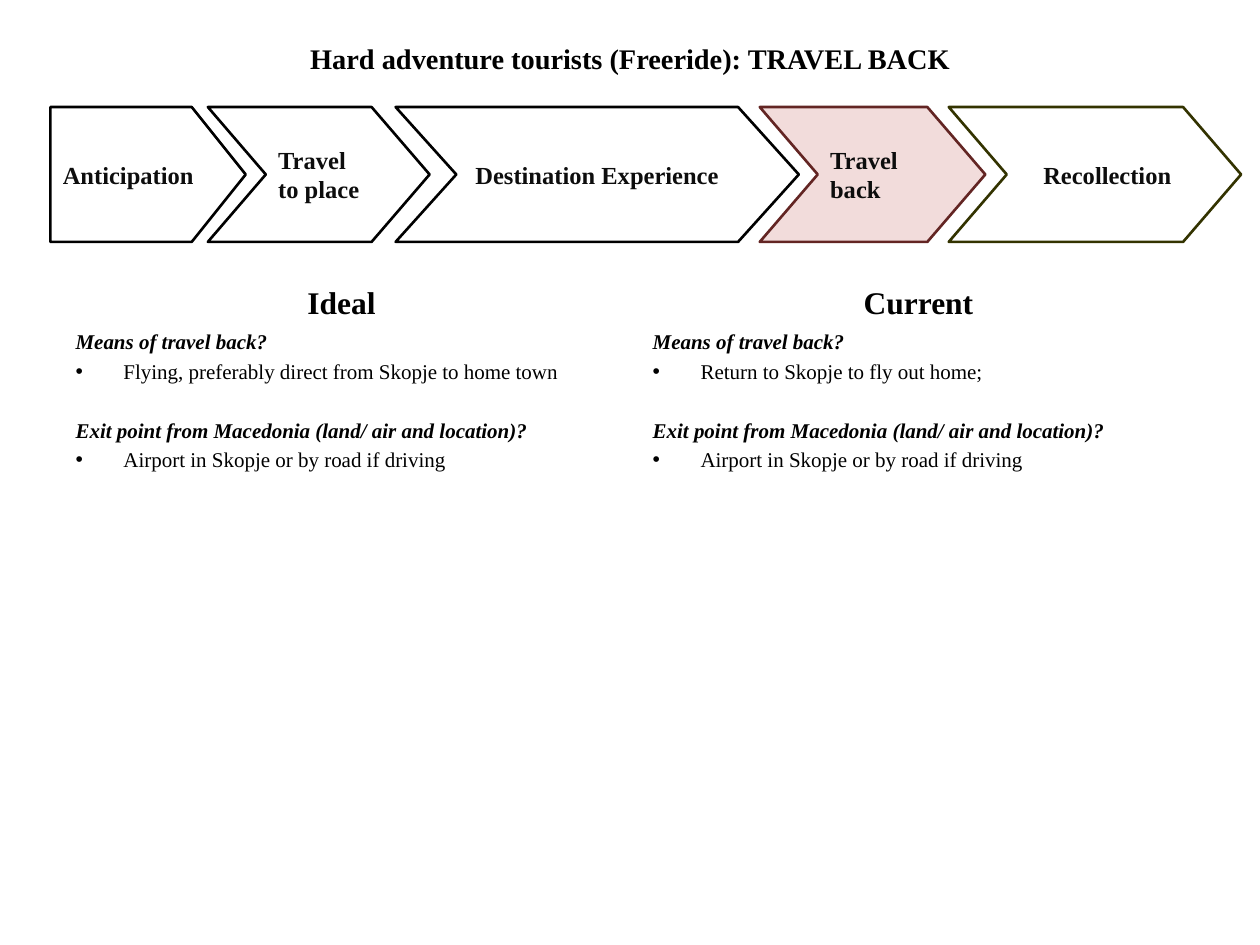
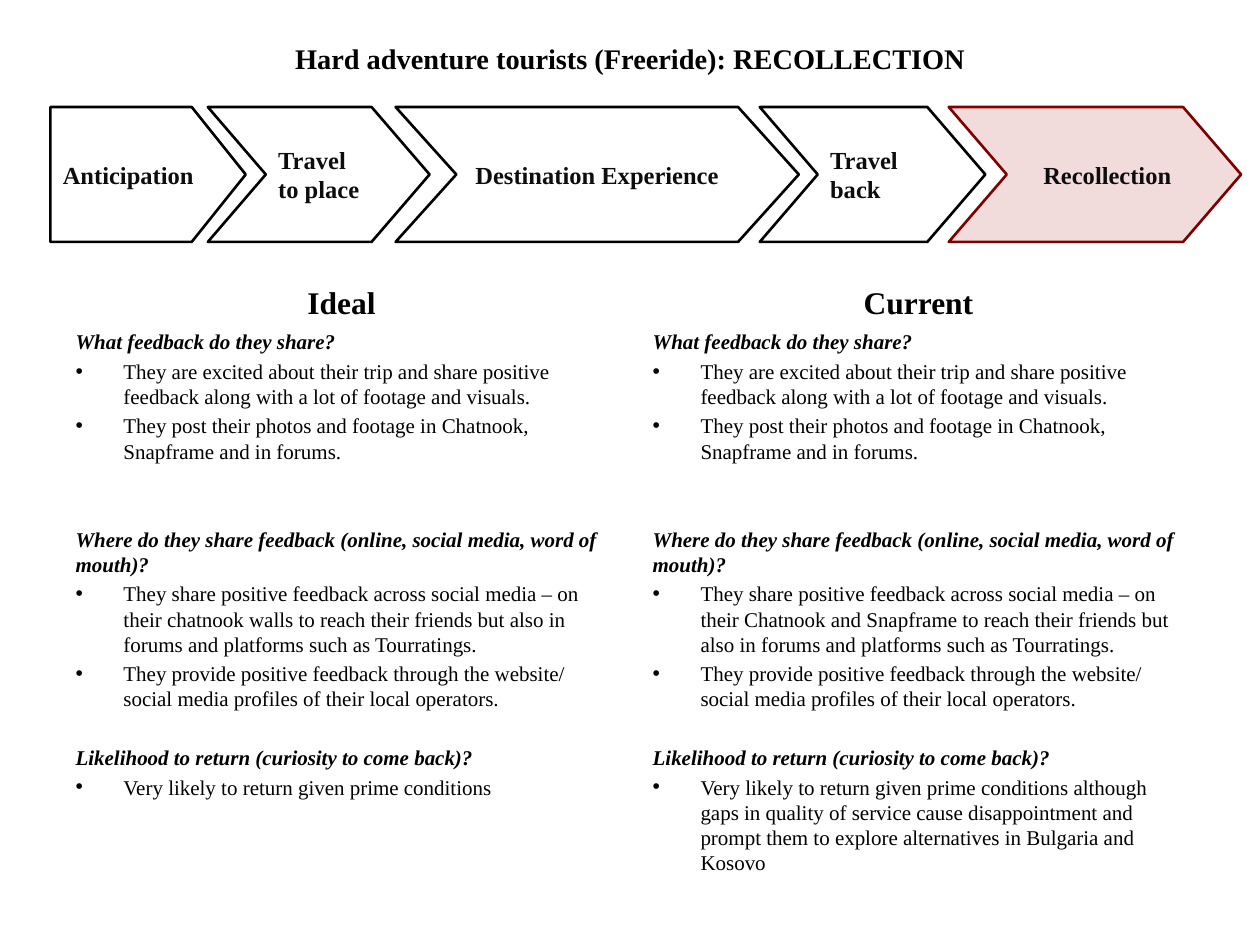
from lxml import etree
from pptx import Presentation
from pptx.dml.color import RGBColor
from pptx.enum.shapes import MSO_SHAPE
from pptx.enum.text import MSO_ANCHOR, MSO_AUTO_SIZE, PP_ALIGN
from pptx.oxml.ns import qn
from pptx.util import Inches, Pt

PENTAGON, CHEVRON = MSO_SHAPE.PENTAGON, MSO_SHAPE.CHEVRON
LEFT, CENTER = PP_ALIGN.LEFT, PP_ALIGN.CENTER
TOP, MIDDLE, BOTTOM = MSO_ANCHOR.TOP, MSO_ANCHOR.MIDDLE, MSO_ANCHOR.BOTTOM
NO_FIT = MSO_AUTO_SIZE.NONE

# Shared style
FONT = "Times New Roman"
BLACK, INK, PINK, WHITE = "000000", "0D0D0D", "F2DCDB", "FFFFFF"
BODY_SIZE = 12
SPACE = 2.4          # space before every paragraph, points
BLANK_LINE = 16.8    # height of one skipped line, points
INDENT = 0.38

TITLE_BOX = (0.5, 0.3, 9, 0.33)
BAND_TOP, BAND_HEIGHT = 0.85, 1.07
COLUMN_LEFTS, COLUMN_TOP = (0.5, 5.08), 2.1
COLUMN_WIDTH = 4.42

# Journey stages: text, shape, left, width, adjustment, alignment, left inset
STAGES = [
    ("Anticipation", PENTAGON, 0.4, 1.55, 0.4, LEFT, 0.1),
    ("Travel to place", CHEVRON, 1.65, 1.76, 0.43, LEFT, 0.1),
    ("Destination Experience", CHEVRON, 3.14, 3.2, 0.45, CENTER, 0.1),
    ("Travel back", CHEVRON, 6.03, 1.79, 0.43, LEFT, 0.1),
    ("Recollection", CHEVRON, 7.53, 2.32, 0.43, LEFT, 0.29),
]

# Questions: heading, lines skipped above it, answers
MEANS = "Means of travel back?"
EXIT = ("Exit point from Macedonia (land/ air and location)?", 1,
        ["Airport in Skopje or by road if driving"])
FEEDBACK = ("What feedback do they share?", 0, [
    "They are excited about their trip and share positive feedback along "
    "with a lot of footage and visuals.",
    "They post their photos and footage in Chatnook, Snapframe and in forums."])
WHERE = "Where do they share feedback (online, social media, word of mouth)?"
OPERATORS = ("They provide positive feedback through the website/ social media "
             "profiles of their local operators.")
RETURN = "Likelihood to return (curiosity to come back)?"

SLIDES = [
    {
        "title": "TRAVEL BACK",
        "accents": {"Travel back": (PINK, "632523"),
                    "Recollection": (WHITE, "333300")},
        "Ideal": [
            (MEANS, 0, ["Flying, preferably direct from Skopje to home town"]),
            EXIT],
        "Current": [
            (MEANS, 0, ["Return to Skopje to fly out home;"]),
            EXIT],
    },
    {
        "title": "RECOLLECTION",
        "accents": {"Recollection": (PINK, "800000")},
        "Ideal": [
            FEEDBACK,
            (WHERE, 2, [
                "They share positive feedback across social media – on their "
                "chatnook walls to reach their friends but also in forums and "
                "platforms such as Tourratings.", OPERATORS]),
            (RETURN, 1, ["Very likely to return given prime conditions"])],
        "Current": [
            FEEDBACK,
            (WHERE, 2, [
                "They share positive feedback across social media – on their "
                "Chatnook and Snapframe to reach their friends but also in "
                "forums and platforms such as Tourratings.", OPERATORS]),
            (RETURN, 1, [
                "Very likely to return given prime conditions although gaps in "
                "quality of service cause disappointment and prompt them to "
                "explore alternatives in Bulgaria and Kosovo"])],
    },
]


def rgb(value):
    return RGBColor.from_string(value)


def place(sp, left, top, width, height, anchor):
    sp.left, sp.top = Inches(left), Inches(top)
    sp.width, sp.height = Inches(width), Inches(height)
    tf = sp.text_frame
    tf.word_wrap = True
    tf.auto_size = NO_FIT
    tf.vertical_anchor = anchor
    return tf


def write(p, text, size, color=BLACK, bold=True, italic=False, align=LEFT, space=0):
    p.text = text
    p.alignment = align
    p.space_before = Pt(space)
    font = p.runs[0].font
    font.name, font.size = FONT, Pt(size)
    font.bold, font.italic = bold, italic
    font.color.rgb = rgb(color)


def set_bullet(p, char=None):
    """Hanging bullet, or a plain flush paragraph when no char is given."""
    pPr = p._p.get_or_add_pPr()
    indent = Inches(INDENT) if char else 0
    pPr.set("marL", str(indent))
    pPr.set("indent", str(-indent))
    if char:
        etree.SubElement(pPr, qn("a:buFont")).set("typeface", "Arial")
        etree.SubElement(pPr, qn("a:buChar")).set("char", char)
    else:
        etree.SubElement(pPr, qn("a:buNone"))


def add_title(s, text):
    tf = place(s.shapes.title, *TITLE_BOX, MIDDLE)
    write(tf.paragraphs[0], text, 16.2, align=CENTER)


def fill_column(header, body, left, top, name, questions):
    # Column header
    tf = place(header, left, top, COLUMN_WIDTH, 0.5, BOTTOM)
    write(tf.paragraphs[0], name, 18, align=CENTER, space=SPACE)
    set_bullet(tf.paragraphs[0])

    # Questions and answers
    tf = place(body, left, top + 0.46, COLUMN_WIDTH, 4.76, TOP)
    p = tf.paragraphs[0]
    for i, (question, skipped, answers) in enumerate(questions):
        if i:
            p = tf.add_paragraph()
        write(p, question, BODY_SIZE, italic=True,
              space=SPACE + skipped * BLANK_LINE)
        set_bullet(p)
        for answer in answers:
            p = tf.add_paragraph()
            write(p, answer, BODY_SIZE, bold=False, space=SPACE)
            set_bullet(p, "•")


def add_journey(s, top, height, accents):
    for text, kind, left, width, adj, align, inset in STAGES:
        sp = s.shapes.add_shape(kind, Inches(left), Inches(top),
                                Inches(width), Inches(height))
        sp.adjustments[0] = adj
        sp.shadow.inherit = False
        fill, line = accents.get(text, (None, BLACK))
        if fill:
            sp.fill.solid()
            sp.fill.fore_color.rgb = rgb(fill)
        else:
            sp.fill.background()
        sp.line.color.rgb = rgb(line)
        sp.line.width = Pt(1.5)
        tf = place(sp, left, top, width, height, MIDDLE)
        tf.margin_left, tf.margin_right = Inches(inset), Inches(0.08)
        if align == CENTER:
            tf.margin_right = tf.margin_left
        write(tf.paragraphs[0], text, 14, color=INK, align=align)


def add_stage_slide(prs, content):
    s = prs.slides.add_slide(prs.slide_layouts.get_by_name("Comparison"))
    add_title(s, "Hard adventure tourists (Freeride): " + content["title"])
    ph = s.placeholders
    for i, name in enumerate(("Ideal", "Current")):
        fill_column(ph[2 * i + 1], ph[2 * i + 2], COLUMN_LEFTS[i], COLUMN_TOP,
                    name, content[name])
    add_journey(s, BAND_TOP, BAND_HEIGHT, content["accents"])


def main():
    prs = Presentation()
    prs.slide_width, prs.slide_height = Inches(10), Inches(7.5)
    for content in SLIDES:
        add_stage_slide(prs, content)
    prs.save("out.pptx")


if __name__ == "__main__":
    main()
